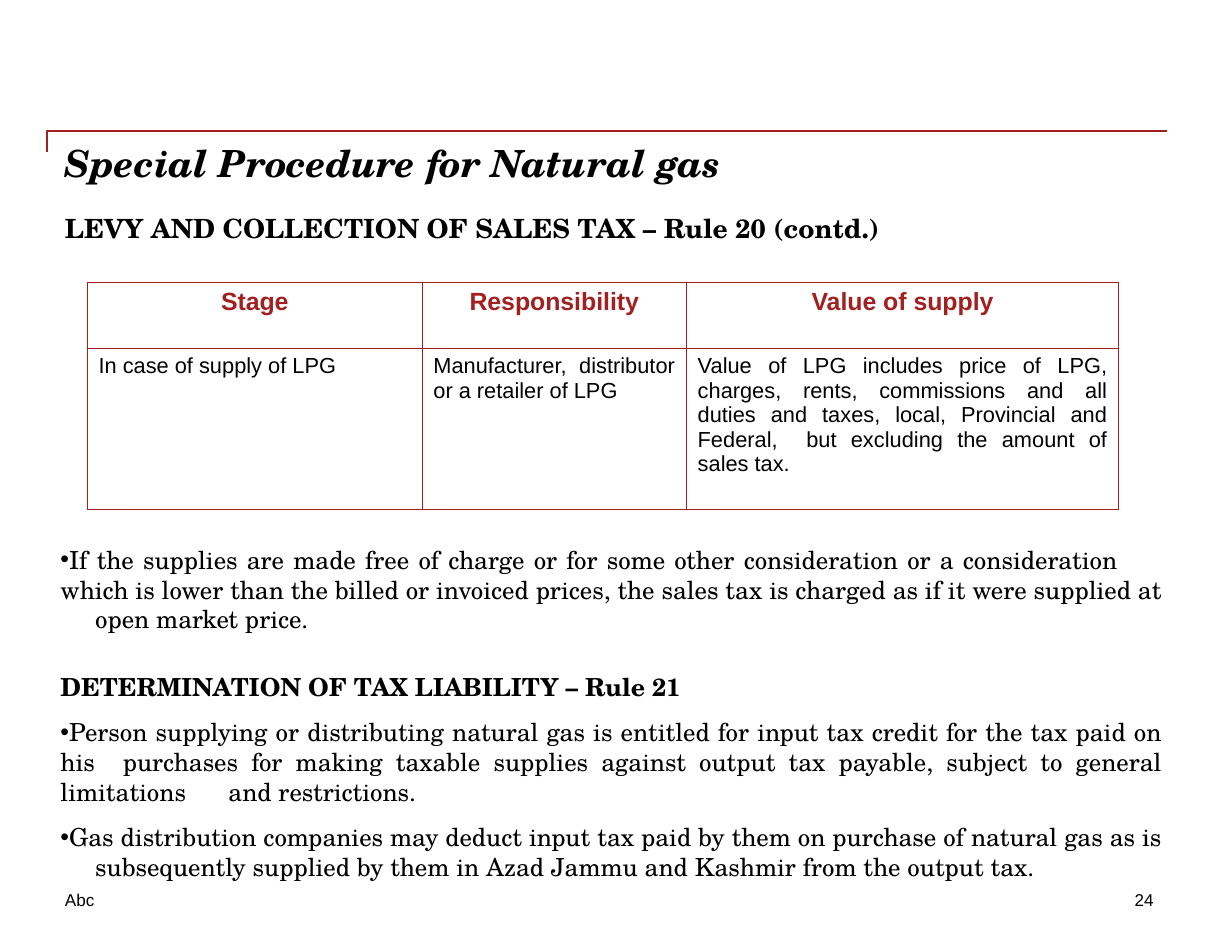
from lxml.etree import SubElement
from pptx import Presentation
from pptx.dml.color import RGBColor
from pptx.enum.shapes import MSO_CONNECTOR
from pptx.enum.text import PP_ALIGN
from pptx.oxml.ns import qn
from pptx.util import Inches, Pt

BLACK, RED = "000000", "A32020"
SERIF, SANS = "TeX Gyre Schola", "Arial"
BODY_WIDTH = 9.84
TAB_STOP = Inches(0.31)

HEADER = ["Stage", "Responsibility", "Value of supply"]
SUPPLY = [
    "In case of supply of LPG",
    "Manufacturer, distributor or a retailer of LPG",
    "Value of LPG includes price of LPG, charges, rents, commissions and all "
    "duties and taxes, local, Provincial and Federal,  but excluding the amount "
    "of sales tax.",
]
# Text, is a heading, space after in points
RULES = [
    ("If the supplies are made free of charge or for some other consideration "
     "or a consideration \twhich is lower than the billed or invoiced prices, "
     "the sales tax is charged as if it were supplied at \topen market price.",
     False, 24),
    ("DETERMINATION OF TAX LIABILITY – Rule 21", True, 10),
    ("Person supplying or distributing natural gas is entitled for input tax "
     "credit for the tax paid on his \tpurchases for making taxable supplies "
     "against output tax payable, subject to general limitations \tand "
     "restrictions.", False, 10),
    ("Gas distribution companies may deduct input tax paid by them on purchase "
     "of natural gas as is \tsubsequently supplied by them in Azad Jammu and "
     "Kashmir from the output tax.", False, 10),
]


def color(code):
    return RGBColor.from_string(code)


def add_span(para, text, size, font=SERIF, code=BLACK, bold=False, italic=False):
    span = para.add_run()
    span.text = text
    span.font.name = font
    span.font.size = Pt(size)
    span.font.bold = bold
    span.font.italic = italic
    span.font.color.rgb = color(code)


def add_box(page, left, top, width, height):
    box = page.shapes.add_textbox(*map(Inches, (left, top, width, height)))
    frame = box.text_frame
    frame.word_wrap = True
    frame.margin_left = frame.margin_right = 0
    frame.margin_top = frame.margin_bottom = 0
    return frame


def add_label(page, place, text, size, align=PP_ALIGN.LEFT, **style):
    para = add_box(page, *place).paragraphs[0]
    para.alignment = align
    add_span(para, text, size, **style)


def set_list_format(para, bullet):
    properties = para._p.get_or_add_pPr()
    properties.set("marL", "0")
    properties.set("indent", "0")
    if bullet:
        SubElement(properties, qn("a:buFont"), typeface=SANS)
        SubElement(properties, qn("a:buChar"), char="•")
    else:
        SubElement(properties, qn("a:buNone"))
    tabs = SubElement(properties, qn("a:tabLst"))
    SubElement(tabs, qn("a:tab"), pos=str(TAB_STOP), algn="l")


def add_rules(page, place, rules):
    frame = add_box(page, *place)
    for index, (text, heading, gap) in enumerate(rules):
        para = frame.add_paragraph() if index else frame.paragraphs[0]
        para.alignment = PP_ALIGN.JUSTIFY
        para.space_after = Pt(gap)
        set_list_format(para, bullet=not heading)
        add_span(para, text, 16, bold=heading)


def add_corner_rule(page, start, end):
    rule = page.shapes.add_connector(
        MSO_CONNECTOR.ELBOW, *map(Inches, start + end))
    rule.line.color.rgb = color(RED)
    rule.line.width = Pt(1)
    properties = rule._element.spPr
    # The bend sits at the very start of the connector
    guides = properties.find(qn("a:prstGeom")).find(qn("a:avLst"))
    SubElement(guides, qn("a:gd"), name="adj1", fmla="val 0")
    SubElement(properties, qn("a:effectLst"))


def set_borders(cell):
    properties = cell._tc.get_or_add_tcPr()
    for side in ("lnL", "lnR", "lnT", "lnB"):
        border = SubElement(properties, qn(f"a:{side}"), w=str(Pt(1)))
        fill = SubElement(border, qn("a:solidFill"))
        SubElement(fill, qn("a:srgbClr"), val=RED)


def add_supply_table(page, left, top, columns, rows):
    holder = page.shapes.add_table(
        len(rows), len(columns),
        *map(Inches, (left, top, sum(columns), sum(rows))))
    table = holder.table
    table.first_row = table.horz_banding = False
    for column, width in zip(table.columns, columns):
        column.width = Inches(width)
    for row, height in zip(table.rows, rows):
        row.height = Inches(height)

    for row_index, texts in enumerate((HEADER, SUPPLY)):
        header = row_index == 0
        for column_index, text in enumerate(texts):
            cell = table.cell(row_index, column_index)
            set_borders(cell)
            cell.fill.background()
            para = cell.text_frame.paragraphs[0]
            para.alignment = PP_ALIGN.CENTER if header else PP_ALIGN.JUSTIFY
            add_span(para, text, 16 if header else 14, font=SANS,
                     code=RED if header else BLACK, bold=header)


def main():
    deck = Presentation()
    deck.slide_width, deck.slide_height = Inches(11), Inches(8.5)
    page = deck.slides.add_slide(deck.slide_layouts[6])

    # Frame and footer
    add_corner_rule(page, (0.42, 1.36), (10.42, 1.17))
    add_label(page, (0.58, 7.94, 0.74, 0.19), "Abc", 11, font=SANS)
    add_label(page, (9.56, 7.94, 0.74, 0.19), "24", 11, PP_ALIGN.RIGHT, font=SANS)

    # Headings
    add_label(page, (0.58, 1.25, BODY_WIDTH, 0.56),
              "Special Procedure for Natural gas", 24, bold=True, italic=True)
    add_label(page, (0.58, 1.89, BODY_WIDTH, 0.4),
              "LEVY AND COLLECTION OF SALES TAX – Rule 20 (contd.)", 17, bold=True)

    # Table and rules
    add_supply_table(page, 0.78, 2.52, (2.99, 2.36, 3.86), (0.59, 1.44))
    add_rules(page, (0.54, 4.86, BODY_WIDTH, 3.09), RULES)

    deck.save("out.pptx")


if __name__ == "__main__":
    main()
